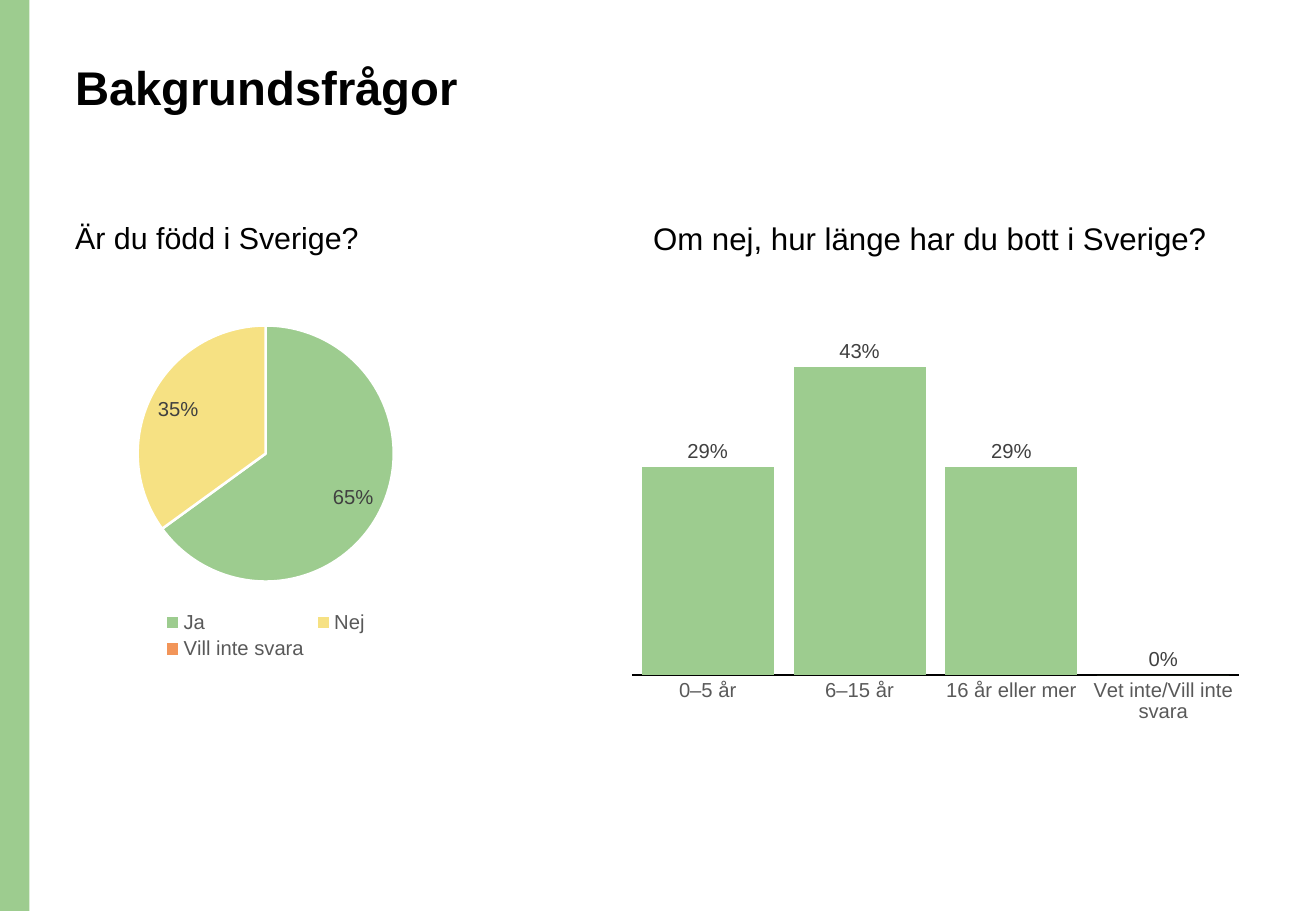
from pptx import Presentation
from pptx.chart.data import CategoryChartData as ChartData
from pptx.dml.color import RGBColor
from pptx.enum.chart import XL_CHART_TYPE as ChartType
from pptx.enum.chart import XL_LABEL_POSITION as LabelPosition
from pptx.enum.chart import XL_LEGEND_POSITION as LegendPosition
from pptx.enum.chart import XL_TICK_MARK as TickMark
from pptx.enum.shapes import MSO_SHAPE as Shape
from pptx.util import Pt

FONT = "Arial"
GREEN, YELLOW, ORANGE = "9DCC8F", "F6E183", "F29559"
BLACK, WHITE, LABEL_GREY, AXIS_GREY = "000000", "FFFFFF", "404040", "595959"


def paint(target, color):
    """Give a fill or a line's fill a solid colour."""
    target.solid()
    target.fore_color.rgb = RGBColor.from_string(color)


def style_font(font, size, color=BLACK, bold=False):
    """Set the face, size, weight and colour of a font."""
    font.name, font.size, font.bold = FONT, Pt(size), bold
    font.color.rgb = RGBColor.from_string(color)


def add_band(page, left, top, width, height, color):
    """Add a plain coloured rectangle."""
    band = page.shapes.add_shape(Shape.RECTANGLE, Pt(left), Pt(top), Pt(width), Pt(height))
    band.shadow.inherit = False
    paint(band.fill, color)
    band.line.fill.background()


def add_text(page, text, *, left, top, width, height, size, bold=False):
    """Add a wrapped text box holding one paragraph."""
    box = page.shapes.add_textbox(Pt(left), Pt(top), Pt(width), Pt(height))
    box.text_frame.word_wrap = True
    para = box.text_frame.paragraphs[0]
    para.line_spacing = 0.9
    span = para.add_run()
    span.text = text
    style_font(span.font, size, bold=bold)


def add_chart(page, kind, answers, *, left, top, width, height, label_format, label_position):
    """Add a one-series chart of answer shares with value labels."""
    data = ChartData(number_format="0%")
    data.categories = list(answers)
    data.add_series("Series 1", list(answers.values()))
    frame = page.shapes.add_chart(kind, Pt(left), Pt(top), Pt(width), Pt(height), data)
    chart = frame.chart
    chart.has_title = False
    chart.has_legend = False
    style_font(chart.font, 10)
    plot = chart.plots[0]
    plot.has_data_labels = True
    labels = plot.data_labels
    labels.show_value = True
    labels.show_percentage = False
    labels.number_format = label_format
    labels.number_format_is_linked = False
    labels.position = label_position
    style_font(labels.font, 12, LABEL_GREY)
    return chart


def style_pie(chart, colors):
    """Colour the slices and put the legend below them."""
    chart.plots[0].vary_by_categories = True
    for index, color in enumerate(colors):
        part = chart.plots[0].series[0].points[index].format
        paint(part.fill, color)
        paint(part.line.fill, WHITE)
        part.line.width = Pt(1.5)
    chart.has_legend = True
    chart.legend.position = LegendPosition.BOTTOM
    chart.legend.include_in_layout = False
    style_font(chart.legend.font, 12, AXIS_GREY)


def style_columns(chart, color, top_value):
    """Colour the columns and leave only the category axis showing."""
    plot = chart.plots[0]
    plot.vary_by_categories = False
    plot.gap_width, plot.overlap = 15, -27
    paint(plot.series[0].format.fill, color)
    values = chart.value_axis
    values.visible = False
    values.has_major_gridlines = False
    values.minimum_scale, values.maximum_scale = 0, top_value
    categories = chart.category_axis
    categories.major_tick_mark = categories.minor_tick_mark = TickMark.NONE
    paint(categories.format.line.fill, BLACK)
    categories.format.line.width = Pt(0.75)
    style_font(categories.tick_labels.font, 12, AXIS_GREY)


def main():
    """Build the slide with its two survey charts."""
    deck = Presentation()
    deck.slide_width, deck.slide_height = Pt(780), Pt(540)
    page = deck.slides.add_slide(deck.slide_layouts[6])
    add_band(page, 0, 0, 17.5, 540, GREEN)
    add_text(page, "Bakgrundsfrågor", left=37.5, top=34.5, width=672, height=73,
             size=28, bold=True)
    add_text(page, "Är du född i Sverige?", left=37.5, top=129, width=330, height=33, size=18)
    add_text(page, "Om nej, hur länge har du bott i Sverige?",
             left=380, top=129, width=362, height=42, size=18.5)

    born_here = {"Ja": 0.65, "Nej": 0.35, "Vill inte svara": 0}
    pie = add_chart(page, ChartType.PIE, born_here, left=37.5, top=183, width=240, height=211,
                    label_format='[<0.01]"";[>0.01]0%', label_position=LabelPosition.INSIDE_END)
    style_pie(pie, [GREEN, YELLOW, ORANGE])

    years_here = {"0–5 år": 0.29, "6–15 år": 0.43, "16 år eller mer": 0.29,
                  "Vet inte/Vill inte svara": 0}
    columns = add_chart(page, ChartType.COLUMN_CLUSTERED, years_here,
                        left=367, top=183, width=375, height=250.5,
                        label_format="0%", label_position=LabelPosition.OUTSIDE_END)
    style_columns(columns, GREEN, 0.5)
    deck.save("out.pptx")


if __name__ == "__main__":
    main()
